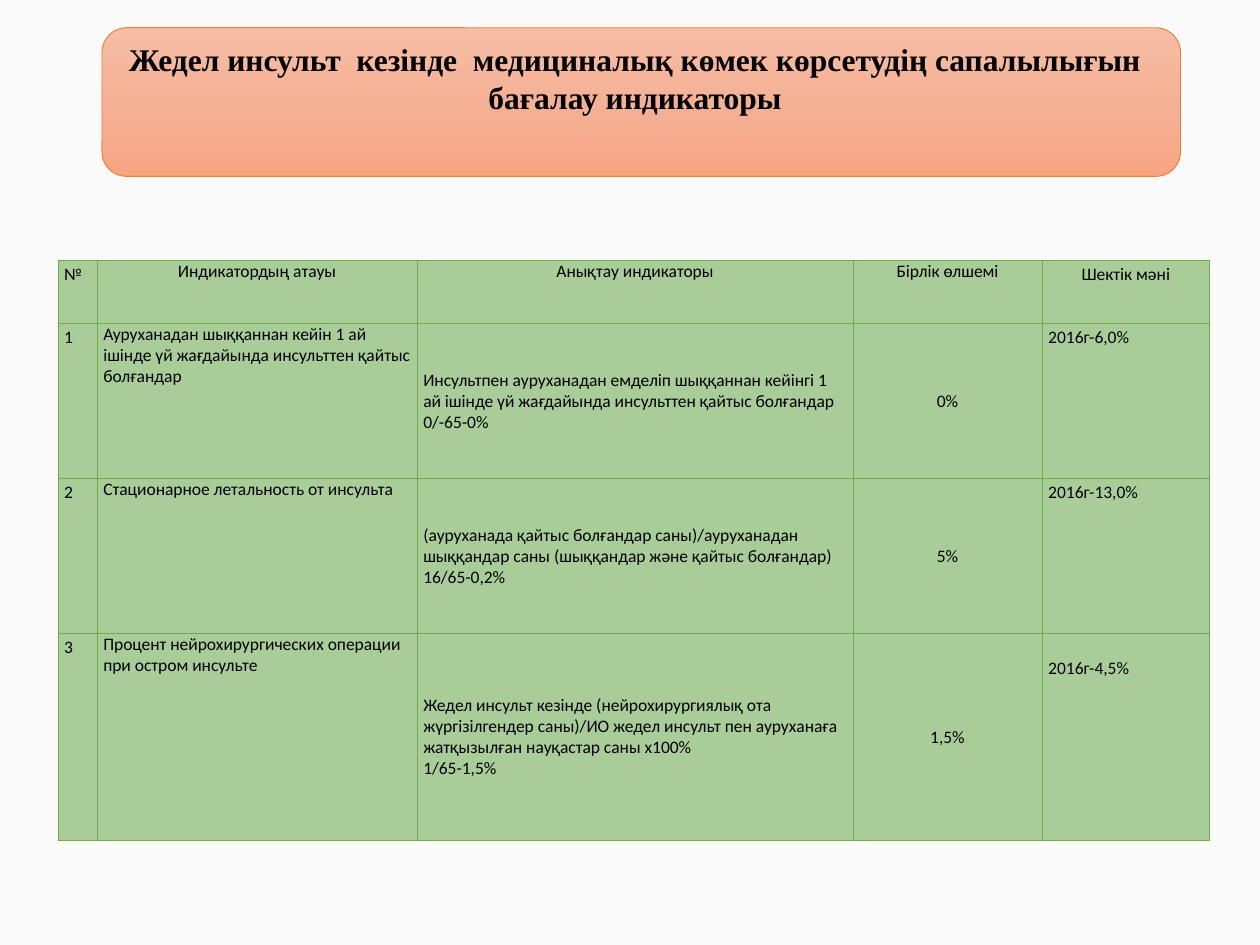
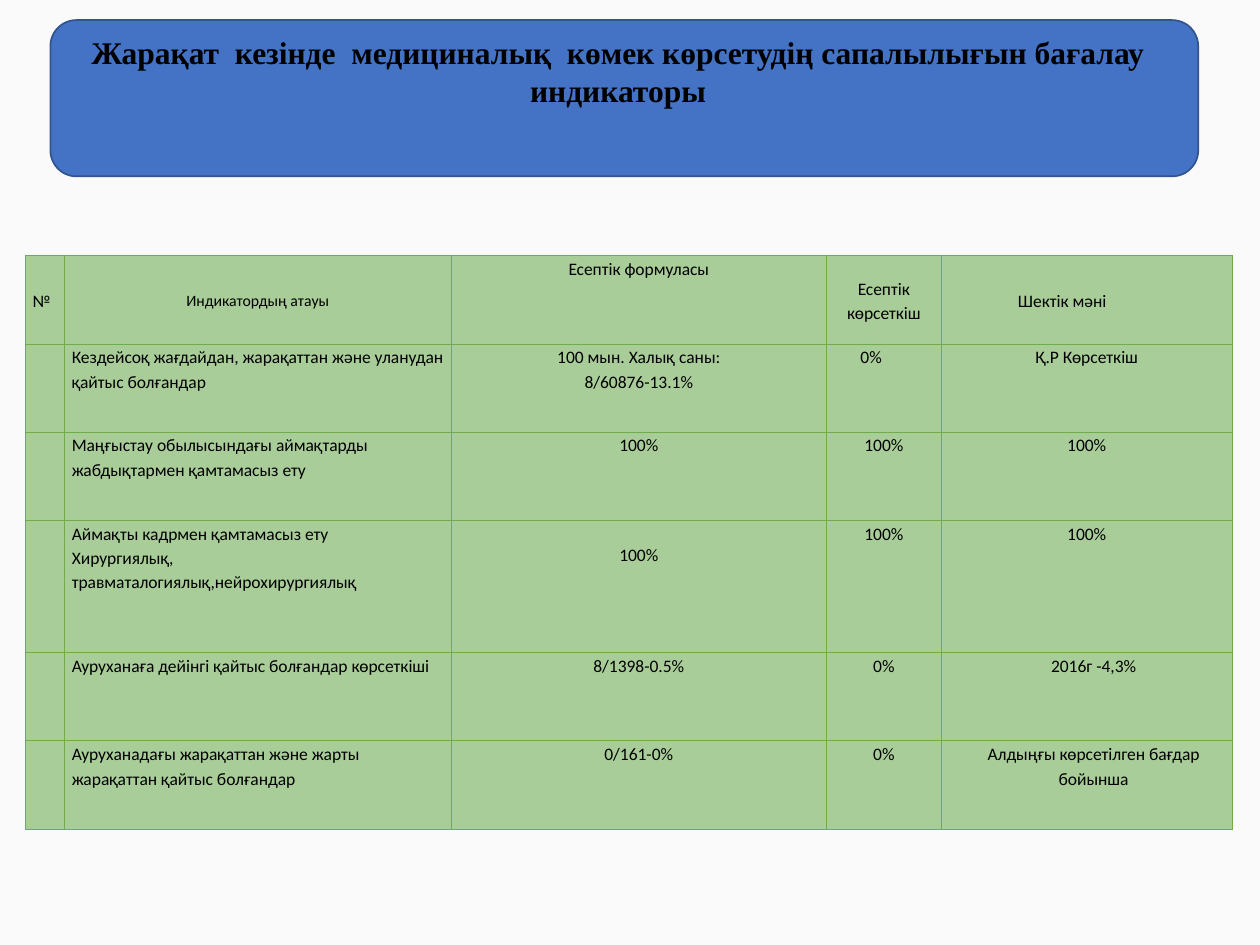
from copy import deepcopy
from dataclasses import dataclass, replace

from pptx import Presentation
from pptx import util as u
from pptx.dml.color import RGBColor
from pptx.enum import shapes, text
from pptx.oxml import parse_xml
from pptx.oxml.ns import nsdecls

LEFT, CENTER = text.PP_ALIGN.LEFT, text.PP_ALIGN.CENTER
TOP, MIDDLE = text.MSO_ANCHOR.TOP, text.MSO_ANCHOR.MIDDLE
TITLE_ONLY = 5


@dataclass(frozen=True)
class Theme:
    background: str = "FAFAFA"
    ink: str = "000000"
    cell: str = "A9CD99"
    grid: str = "70AD47"
    peach: tuple = ("F7BDA5", "F5B196", "F8A582")
    peach_edge: str = "ED7D31"
    blue: tuple = ("4472C4",)
    blue_edge: str = "325491"
    title_font: str = "Times New Roman"
    title_size: float = 18
    body_font: str = "Calibri"
    body_size: float = 10
    small_size: float = 9
    grid_width: float = 0.5


@dataclass(frozen=True)
class Look:
    """How the text of one table cell is set."""
    align: int = LEFT
    anchor: int = TOP
    spacing: float = 1.15
    size: float = Theme.body_size
    indent: float = 0
    drop: float = 0


class Deck:
    def __init__(self, theme):
        self.theme = theme
        self.slide = None
        self.prs = Presentation()
        self.prs.slide_width, self.prs.slide_height = u.Inches(10), u.Inches(7.5)
        backdrop = self.prs.slide_master.background.fill
        backdrop.solid()
        backdrop.fore_color.rgb = RGBColor.from_string(theme.background)

    def new_slide(self):
        self.slide = self.prs.slides.add_slide(self.prs.slide_layouts[TITLE_ONLY])

    def style_text(self, paragraph, font, size, bold=False):
        for run in paragraph.runs:
            run.font.name, run.font.size, run.font.bold = font, u.Pt(size), bold
            run.font.color.rgb = RGBColor.from_string(self.theme.ink)

    def banner_title(self, wording, box, colours, edge, edge_width):
        """A rounded banner with the slide title on top of it."""
        left, top, width, height = (u.Inches(n) for n in box)
        banner = self.slide.shapes.add_shape(
            shapes.MSO_SHAPE.ROUNDED_RECTANGLE, left, top, width, height)
        banner.shadow.inherit = False
        self.paint(banner, colours)
        banner.line.color.rgb = RGBColor.from_string(edge)
        banner.line.width = u.Pt(edge_width)

        title = self.slide.shapes.title
        title.element.addprevious(banner.element)
        title.left, title.top = left - u.Inches(0.05), top
        title.width, title.height = width, height
        frame = title.text_frame
        frame.text = wording
        frame.word_wrap = True
        frame.auto_size = text.MSO_AUTO_SIZE.NONE
        frame.vertical_anchor = TOP
        frame.margin_top = frame.margin_left = frame.margin_right = u.Inches(0.1)
        heading = frame.paragraphs[0]
        heading.alignment = CENTER
        heading.line_spacing = 1.0
        self.style_text(heading, self.theme.title_font, self.theme.title_size, True)

    def paint(self, shape, colours):
        """One colour gives a solid fill, three a downward gradient."""
        if len(colours) == 1:
            shape.fill.solid()
            shape.fill.fore_color.rgb = RGBColor.from_string(colours[0])
            return
        shape.fill.gradient()
        shape.fill.gradient_angle = 270
        stop_list = shape.element.xpath(".//a:gsLst")[0]
        stop_list.append(deepcopy(stop_list[-1]))
        for i, (stop, colour) in enumerate(zip(shape.fill.gradient_stops, colours)):
            stop.color.rgb = RGBColor.from_string(colour)
            stop.position = i / (len(colours) - 1)

    def table(self, left, top, widths, heights, rows, looks, exceptions, inset):
        """Each column has a look; exceptions change it for single cells."""
        grid = self.slide.shapes.add_table(
            len(rows), len(widths), u.Inches(left), u.Inches(top),
            u.Inches(sum(widths)), u.Inches(sum(heights))).table
        grid.first_row = grid.horz_banding = False
        for column, width in zip(grid.columns, widths):
            column.width = u.Inches(width)
        for row, height in zip(grid.rows, heights):
            row.height = u.Inches(height)
        for r, row in enumerate(rows):
            for c, wording in enumerate(row):
                look = replace(looks[c], **exceptions.get((r, c), {}))
                self.fill_cell(grid.cell(r, c), wording, look, inset)

    def fill_cell(self, cell, wording, look, inset):
        cell.text_frame.text = wording
        cell.vertical_anchor = look.anchor
        cell.margin_left, cell.margin_right = u.Inches(inset + look.indent), u.Inches(inset)
        cell.margin_top, cell.margin_bottom = u.Inches(look.drop), 0
        for paragraph in cell.text_frame.paragraphs:
            paragraph.alignment = look.align
            paragraph.line_spacing = look.spacing
            self.style_text(paragraph, self.theme.body_font, look.size)
        # Borders come before the fill in the cell properties
        properties = cell._tc.get_or_add_tcPr()
        for side in "LRTB":
            properties.append(parse_xml(
                f'<a:ln{side} {nsdecls("a")} w="{u.Pt(self.theme.grid_width)}"><a:solidFill>'
                f'<a:srgbClr val="{self.theme.grid}"/></a:solidFill></a:ln{side}>'))
        cell.fill.solid()
        cell.fill.fore_color.rgb = RGBColor.from_string(self.theme.cell)


def stroke_slide(deck):
    deck.new_slide()
    deck.banner_title(
        "Жедел инсульт  кезінде  медициналық көмек көрсетудің сапалылығын бағалау индикаторы",
        (0.81, 0.22, 8.56, 1.18), deck.theme.peach, deck.theme.peach_edge, 0.5)
    indicators = [
        ("№", "Индикатордың атауы", "Анықтау индикаторы", "Бірлік өлшемі", "Шектік мәні"),
        ("1", "Ауруханадан шыққаннан кейін 1 ай ішінде үй жағдайында инсульттен қайтыс болғандар",
         "Инсультпен ауруханадан емделіп шыққаннан кейінгі 1 ай ішінде үй жағдайында "
         "инсульттен қайтыс болғандар\n0/-65-0%", "0%", "2016г-6,0%"),
        ("2", "Стационарное летальность от инсульта",
         "(ауруханада қайтыс болғандар саны)/ауруханадан шыққандар саны "
         "(шыққандар және қайтыс болғандар)\n16/65-0,2%", "5%", "2016г-13,0%"),
        ("3", "Процент нейрохирургических операции при остром инсульте",
         "Жедел инсульт кезінде (нейрохирургиялық ота жүргізілгендер саны)/ИО жедел инсульт "
         "пен ауруханаға жатқызылған науқастар саны х100%\n1/65-1,5%", "1,5%", "2016г-4,5%"),
    ]
    looks = [Look(), Look(spacing=1.0), Look(anchor=MIDDLE, spacing=1.0),
             Look(CENTER, MIDDLE, 1.0), Look()]
    exceptions = {(0, c): dict(align=CENTER, anchor=TOP) for c in range(1, 5)}
    exceptions[3, 4] = dict(drop=0.17)
    deck.table(0.46, 2.07, (0.31, 2.54, 3.46, 1.5, 1.33), (0.5, 1.23, 1.23, 1.64),
               indicators, looks, exceptions, inset=0.05)


def injury_slide(deck):
    deck.new_slide()
    deck.banner_title(
        "Жарақат  кезінде  медициналық  көмек көрсетудің сапалылығын бағалау индикаторы",
        (0.4, 0.16, 9.11, 1.24), deck.theme.blue, deck.theme.blue_edge, 1)
    indicators = [
        ("№", "Индикатордың атауы", "Есептік формуласы", "Есептік көрсеткіш", "Шектік мәні"),
        ("", "Кездейсоқ жағдайдан, жарақаттан және уланудан қайтыс болғандар",
         "100 мын. Халық саны:\n8/60876-13.1%", "0%", "Қ.Р Көрсеткіш"),
        ("", "Маңғыстау обылысындағы аймақтарды жабдықтармен қамтамасыз ету",
         "100%", "100%", "100%"),
        ("", "Аймақты кадрмен қамтамасыз ету\nХирургиялық, травматалогиялық,нейрохирургиялық",
         "100%", "100%", "100%"),
        ("", "Ауруханаға дейінгі қайтыс болғандар көрсеткіші", "8/1398-0.5%", "0%", "2016г -4,3%"),
        ("", "Ауруханадағы жарақаттан және жарты жарақаттан қайтыс болғандар",
         "0/161-0%", "0%", "Алдыңғы көрсетілген бағдар бойынша"),
    ]
    looks = [Look()] * 2 + [Look(CENTER)] * 3
    exceptions = {
        (0, 0): dict(anchor=MIDDLE),
        (0, 1): dict(align=CENTER, anchor=MIDDLE, size=deck.theme.small_size),
        (0, 3): dict(anchor=MIDDLE),
        (0, 4): dict(align=LEFT, anchor=MIDDLE, indent=0.55),
        (1, 3): dict(align=LEFT, indent=0.21),
        (3, 2): dict(drop=0.17),
        (4, 4): dict(indent=0.11),
        (5, 4): dict(indent=0.11),
    }
    deck.table(0.2, 2.03, (0.31, 3.07, 2.98, 0.91, 2.31), (0.7, 0.7, 0.7, 1.05, 0.7, 0.7),
               indicators, looks, exceptions, inset=0.06)


def main():
    deck = Deck(Theme())
    stroke_slide(deck)
    injury_slide(deck)
    deck.prs.save("out.pptx")


if __name__ == "__main__":
    main()
